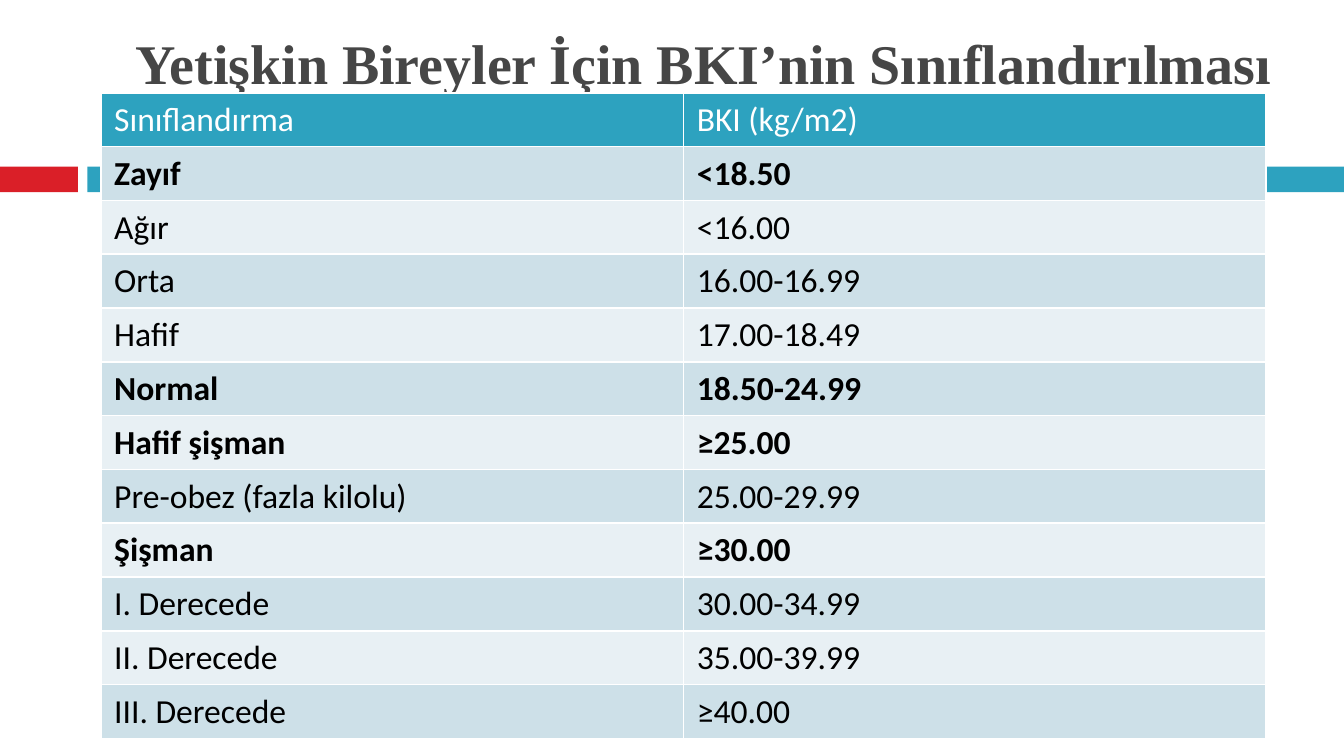
from pptx import Presentation
from pptx.dml.color import RGBColor
from pptx.enum.shapes import MSO_SHAPE
from pptx.enum.text import MSO_ANCHOR
from pptx.util import Inches, Pt

TITLE = "Yetişkin Bireyler İçin BKI’nin Sınıflandırılması"
HEADER = ("Sınıflandırma", "BKI (kg/m2)")
CLASSES = [
    ("Zayıf", "<18.50"),
    ("Ağır", "<16.00"),
    ("Orta", "16.00-16.99"),
    ("Hafif", "17.00-18.49"),
    ("Normal", "18.50-24.99"),
    ("Hafif şişman", "≥25.00"),
    ("Pre-obez (fazla kilolu)", "25.00-29.99"),
    ("Şişman", "≥30.00"),
    ("I. Derecede", "30.00-34.99"),
    ("II. Derecede", "35.00-39.99"),
    ("III. Derecede", "≥40.00"),
]
MAIN_CLASSES = {"Zayıf", "Normal", "Hafif şişman", "Şişman"}
RED, TEAL = "DA1F28", "2DA2BF"
BANDS = ("E8F0F4", "CDE0E8")
BARS = [(0, 0.58, RED), (0.65, 9.35, TEAL)]
TABLE_W, TABLE_H, ROW_H = 8.67, 4.8, 0.37


def rgb(color):
    return RGBColor.from_string(color)


def style(p, font, size, color, bold):
    p.font.name = font
    p.font.size = Pt(size)
    p.font.color.rgb = rgb(color)
    p.font.bold = bold


prs = Presentation()
prs.slide_width = Inches(10)
prs.slide_height = prs.slide_width * 9 // 16
s = prs.slides.add_slide(prs.slide_layouts[6])

for x, w, color in BARS:
    sp = s.shapes.add_shape(MSO_SHAPE.RECTANGLE, Inches(x), Inches(1.24), Inches(w), Inches(0.19))
    sp.shadow.inherit = False
    sp.fill.solid()
    sp.fill.fore_color.rgb = rgb(color)
    sp.line.fill.background()

tf = s.shapes.add_textbox(Inches(0.91), Inches(-0.34), Inches(8.92), Inches(1.1)).text_frame
tf.word_wrap = True
tf.vertical_anchor = MSO_ANCHOR.BOTTOM
p = tf.paragraphs[0]
p.text = TITLE
style(p, "Times New Roman", 30, "464646", True)

rows = [HEADER] + CLASSES
frame = s.shapes.add_table(
    len(rows), len(HEADER), Inches(0.75), Inches(0.69), Inches(TABLE_W), Inches(TABLE_H))
table = frame.table

for i, row in enumerate(rows):
    table.rows[i].height = Inches(ROW_H)
    for j, text in enumerate(row):
        cell = table.cell(i, j)
        cell.fill.solid()
        cell.fill.fore_color.rgb = rgb(BANDS[i % 2] if i else TEAL)
        p = cell.text_frame.paragraphs[0]
        p.text = text
        style(p, "Calibri", 18, "000000" if i else "FFFFFF", row[0] in MAIN_CLASSES)
frame.height = Inches(TABLE_H)

prs.save("out.pptx")
